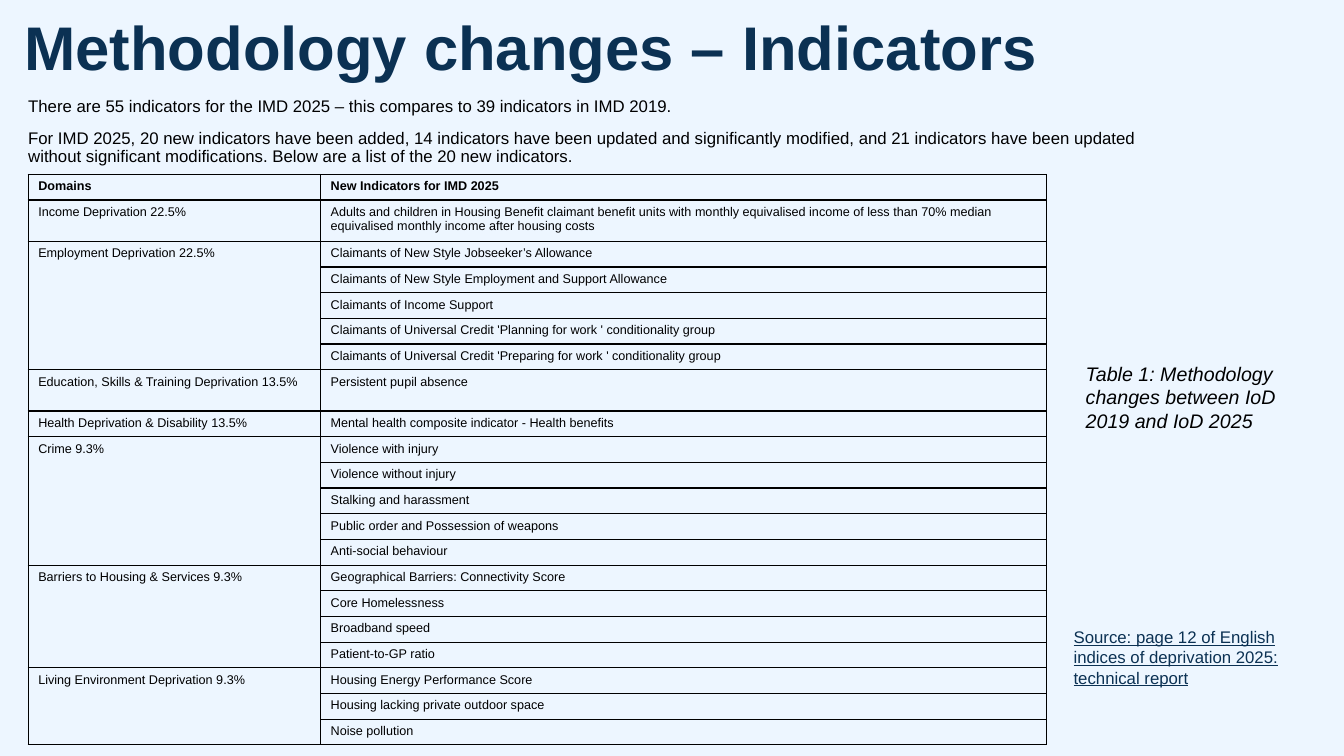
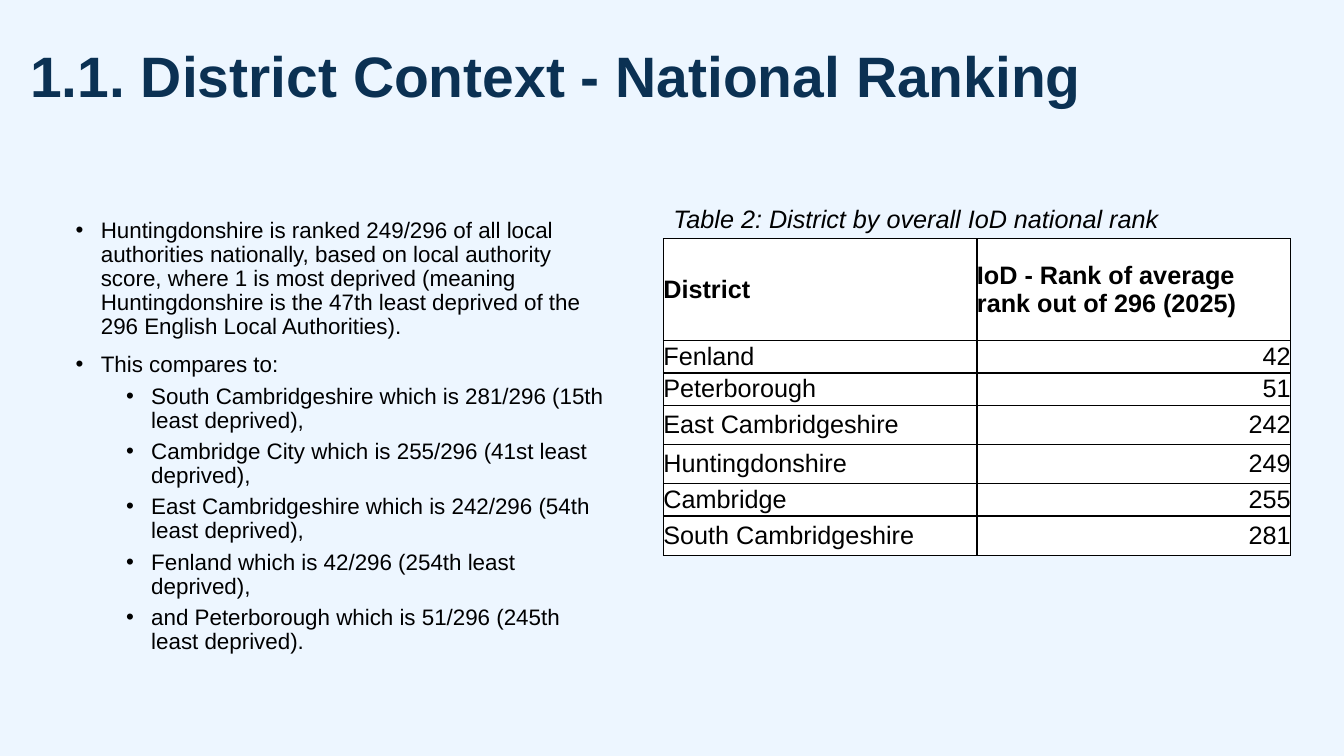
from dataclasses import dataclass

from lxml import etree
from pptx import Presentation
from pptx.dml.color import RGBColor
from pptx.enum.text import MSO_ANCHOR, PP_ALIGN
from pptx.oxml.ns import qn
from pptx.util import Inches, Pt

TOP, MIDDLE = MSO_ANCHOR.TOP, MSO_ANCHOR.MIDDLE
LEFT, RIGHT = PP_ALIGN.LEFT, PP_ALIGN.RIGHT


@dataclass(frozen=True)
class Theme:
    font: str = "Arial"
    background: str = "EDF6FF"
    navy: str = "0B3153"
    ink: str = "000000"
    white: str = "FFFFFF"
    title: float = 44
    title_small: float = 40.7
    large: float = 18
    body: float = 16
    caption: float = 14
    intro: float = 12
    small: float = 9


THEME = Theme()

DOMAINS = [
    ("Income Deprivation 22.5%", [
        "Adults and children in Housing Benefit claimant benefit units with monthly "
        "equivalised income of less than 70% median equivalised monthly income after "
        "housing costs"]),
    ("Employment Deprivation 22.5%", [
        "Claimants of New Style Jobseeker’s Allowance",
        "Claimants of New Style Employment and Support Allowance",
        "Claimants of Income Support",
        "Claimants of Universal Credit 'Planning for work ' conditionality group",
        "Claimants of Universal Credit 'Preparing for work ' conditionality group"]),
    ("Education, Skills & Training Deprivation 13.5%", ["Persistent pupil absence"]),
    ("Health Deprivation & Disability 13.5%", [
        "Mental health composite indicator - Health benefits"]),
    ("Crime 9.3%", [
        "Violence with injury",
        "Violence without injury",
        "Stalking and harassment",
        "Public order and Possession of weapons",
        "Anti-social behaviour"]),
    ("Barriers to Housing & Services 9.3%", [
        "Geographical Barriers: Connectivity Score",
        "Core Homelessness",
        "Broadband speed",
        "Patient-to-GP ratio"]),
    ("Living Environment Deprivation 9.3%", [
        "Housing Energy Performance Score",
        "Housing lacking private outdoor space",
        "Noise pollution"]),
]
TALL_ROWS = (1, 7)

RANKS = [
    ("District", "IoD - Rank of average rank out of 296 (2025)"),
    ("Fenland", "42"),
    ("Peterborough", "51"),
    ("East Cambridgeshire", "242"),
    ("Huntingdonshire", "249"),
    ("Cambridge", "255"),
    ("South Cambridgeshire", "281"),
]

RANKING_POINTS = [
    (0, "Huntingdonshire is ranked 249/296 of all local authorities nationally, based on "
        "local authority score, where 1 is most deprived (meaning Huntingdonshire is the "
        "47th least deprived of the 296 English Local Authorities)."),
    (0, "This compares to:"),
    (1, "South Cambridgeshire which is 281/296 (15th least deprived),"),
    (1, "Cambridge City which is 255/296 (41st least deprived),"),
    (1, "East Cambridgeshire which is 242/296 (54th least deprived),"),
    (1, "Fenland which is 42/296 (254th least deprived),"),
    (1, "and Peterborough which is 51/296 (245th least deprived)."),
]


class Deck:
    def __init__(self, theme):
        self.theme = theme
        self.prs = Presentation()
        self.prs.slide_width, self.prs.slide_height = Inches(13.33), Inches(7.5)
        self.s = None

    def add_slide(self):
        self.s = self.prs.slides.add_slide(self.prs.slide_layouts[6])
        fill = self.s.background.fill
        fill.solid()
        fill.fore_color.rgb = RGBColor.from_string(self.theme.background)

    def style(self, p, size, color=None, bold=False, italic=False, underline=False):
        for r in p.runs:
            font = r.font
            font.name, font.size = self.theme.font, Pt(size)
            font.bold, font.italic, font.underline = bold, italic, underline
            font.color.rgb = RGBColor.from_string(color or self.theme.ink)

    def frame(self, box, inset):
        """Add a wrapping text box; inset=False removes its margins."""
        tf = self.s.shapes.add_textbox(*map(Inches, box)).text_frame
        tf.word_wrap = True
        if not inset:
            tf.margin_left = tf.margin_right = tf.margin_top = tf.margin_bottom = 0
        return tf

    def title(self, text, box, size):
        tf = self.frame(box, inset=False)
        tf.text = text
        p = tf.paragraphs[0]
        p.line_spacing = 0.9
        self.style(p, size, self.theme.navy, bold=True)

    def note(self, text, box, size, **look):
        tf = self.frame(box, inset=True)
        tf.text = text
        self.style(tf.paragraphs[0], size, **look)

    def paragraphs(self, items, box, size, bullets=False):
        """Write (level, text) items as body copy."""
        tf = self.frame(box, inset=False)
        for i, (level, text) in enumerate(items):
            p = tf.add_paragraph() if i else tf.paragraphs[0]
            p.text = text
            if bullets:
                self.bullet(p, level)
            p.line_spacing = 0.9
            p.space_before = Pt((5 if level else 10) if i else 0)
            self.style(p, size)

    def bullet(self, p, level):
        p.level = level
        pPr = p._p.get_or_add_pPr()
        pPr.set("marL", str(Inches(0.25 + 0.5 * level)))
        pPr.set("indent", str(Inches(-0.25)))
        etree.SubElement(pPr, qn("a:buFont"), typeface=self.theme.font)
        etree.SubElement(pPr, qn("a:buChar"), char="•")

    def borders(self, cell):
        tcPr = cell._tc.get_or_add_tcPr()
        for side in ("a:lnL", "a:lnR", "a:lnT", "a:lnB"):
            ln = etree.SubElement(tcPr, qn(side), w=str(Pt(1)))
            fill = etree.SubElement(ln, qn("a:solidFill"))
            etree.SubElement(fill, qn("a:srgbClr"), val=self.theme.ink)

    def table(self, rows, at, widths, heights, size, fill=None, inset=True,
              anchor=TOP, value_align=LEFT):
        """Add a ruled table with a bold first row; value_align sets the last column."""
        box = (*at, sum(widths), sum(heights))
        table = self.s.shapes.add_table(len(rows), len(widths), *map(Inches, box)).table
        table.first_row = table.horz_banding = False
        for column, width in zip(table.columns, widths):
            column.width = Inches(width)
        for i, (row, height) in enumerate(zip(rows, heights)):
            table.rows[i].height = Inches(height)
            for j, text in enumerate(row):
                cell = table.cell(i, j)
                self.borders(cell)
                if fill:
                    cell.fill.solid()
                    cell.fill.fore_color.rgb = RGBColor.from_string(fill)
                else:
                    cell.fill.background()
                cell.vertical_anchor = anchor
                if not inset:
                    cell.margin_left = cell.margin_right = 0
                    cell.margin_top = cell.margin_bottom = 0
                cell.text_frame.text = text
                p = cell.text_frame.paragraphs[0]
                p.alignment = value_align if i and j == len(row) - 1 else LEFT
                self.style(p, size, bold=i == 0)
        return table


def indicators_slide(deck):
    t = deck.theme
    deck.add_slide()
    deck.title("Methodology changes – Indicators", (0.24, 0.17, 10.27, 1.33), t.title)
    deck.paragraphs([
        (0, "There are 55 indicators for the IMD 2025 – this compares to 39 indicators in "
            "IMD 2019."),
        (0, "For IMD 2025, 20 new indicators have been added, 14 indicators have been "
            "updated and significantly modified, and 21 indicators have been updated "
            "without significant modifications. Below are a list of the 20 new "
            "indicators."),
    ], (0.28, 0.97, 11.54, 0.76), t.intro)

    rows = [("Domains", "New Indicators for IMD 2025")]
    spans = []
    for domain, indicators in DOMAINS:
        spans.append((len(rows), len(rows) + len(indicators) - 1))
        rows += [("" if k else domain, text) for k, text in enumerate(indicators)]
    heights = [0.41 if i in TALL_ROWS else 0.255 for i in range(len(rows))]
    table = deck.table(rows, (0.28, 1.73), (2.9, 7.2), heights, t.small)
    for first, last in spans:
        if last > first:
            table.cell(first, 0).merge(table.cell(last, 0))

    deck.note("Table 1: Methodology changes between IoD 2019 and IoD 2025",
              (10.67, 3.54, 2.26, 0.81), t.caption, italic=True)
    deck.note("Source: page 12 of English indices of deprivation 2025: technical report",
              (10.55, 6.17, 2.54, 0.71), t.intro, color=t.navy, underline=True)


def ranking_slide(deck):
    t = deck.theme
    deck.add_slide()
    deck.title("1.1. District Context - National Ranking", (0.3, 0.48, 11.26, 0.87),
               t.title_small)
    deck.paragraphs(RANKING_POINTS, (0.75, 2.17, 5.32, 4.55), t.body, bullets=True)
    deck.note("Table 2: District by overall IoD national rank",
              (6.58, 1.97, 6.22, 0.4), t.large, italic=True)
    deck.table(RANKS, (6.58, 2.37), (3.11, 3.11),
               (1.01, 0.32, 0.32, 0.39, 0.39, 0.32, 0.39), t.large, fill=t.white,
               inset=False, anchor=MIDDLE, value_align=RIGHT)


def main():
    deck = Deck(THEME)
    indicators_slide(deck)
    ranking_slide(deck)
    deck.prs.save("out.pptx")


if __name__ == "__main__":
    main()
